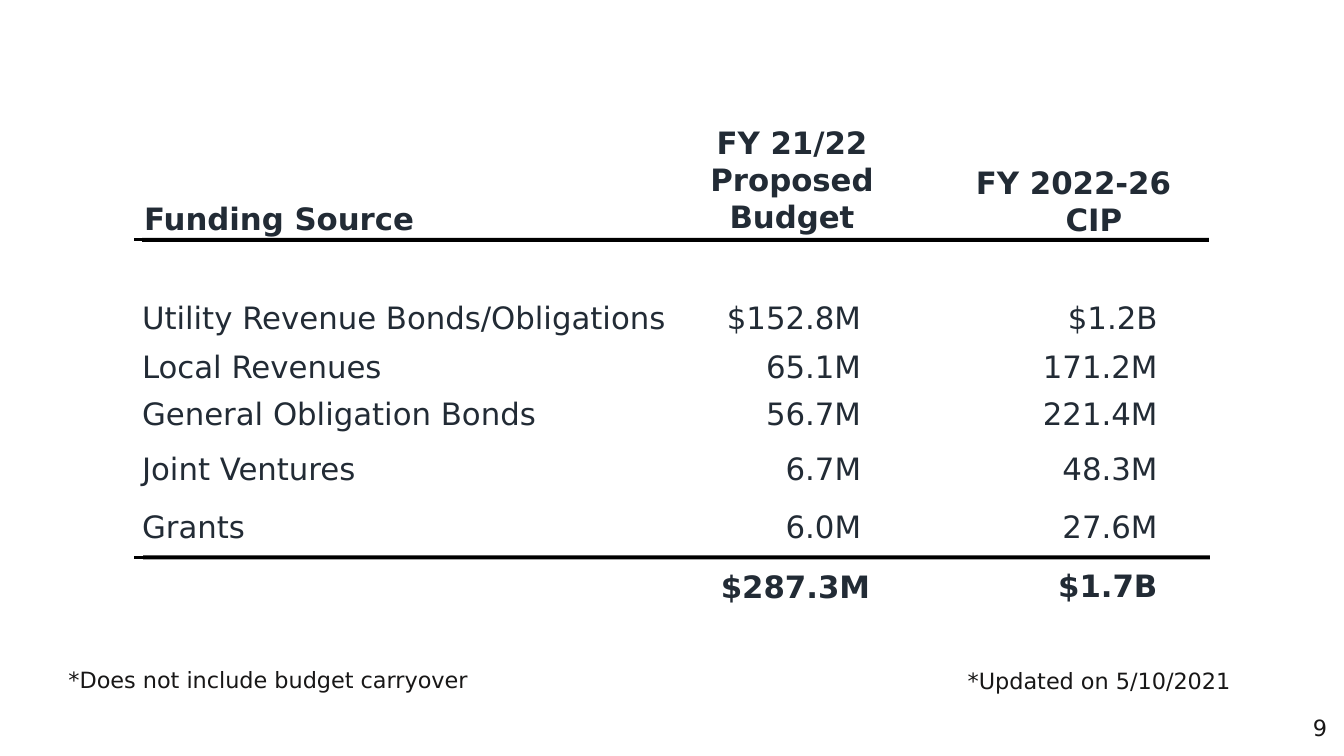
from pptx import Presentation
from pptx.dml.color import RGBColor
from pptx.enum.shapes import MSO_CONNECTOR as Conn, MSO_SHAPE as Shape
from pptx.enum.text import PP_ALIGN as Align
from pptx.util import Pt
from lxml.etree import SubElement
from pptx.oxml.ns import qn

PX = 9144  # EMU per px, 100 px to the inch
SLATE = RGBColor(0x22, 0x2B, 0x35)
INK = RGBColor(0x18, 0x17, 0x17)
BLACK = RGBColor(0, 0, 0)


class Page:
    font = "DejaVu Sans"

    def __init__(self, slide):
        self.shapes = slide.shapes

    def text(self, box, text, aligns=(Align.LEFT,), size=22, color=SLATE,
             bold=False, inset=(0, 0), space=None):
        """Add a text box; the last alignment goes on for later lines."""
        frame = self.shapes.add_textbox(*(n * PX for n in box)).text_frame
        frame.word_wrap = True
        frame.margin_left = frame.margin_right = inset[0] * PX
        frame.margin_top = frame.margin_bottom = inset[1] * PX
        frame.text = text
        for i, para in enumerate(frame.paragraphs):
            para.alignment = aligns[min(i, len(aligns) - 1)]
            if space:
                para.line_spacing = space
            for run in para.runs:
                run.font.name = self.font
                run.font.size = Pt(size)
                run.font.bold = bold
                run.font.color.rgb = color

    def note(self, box, text, align=Align.LEFT, space=0.9):
        self.text(box, text, (align,), 16, INK, inset=(10, 5), space=space)

    def amount(self, right, top, text, bold=False):
        self.text((right - 150, top, 150, 37), text, (Align.RIGHT,), bold=bold)

    def rule(self, left, top):
        """Add a hairline with a heavy bar over it."""
        y = (top + 2) * PX
        line = self.shapes.add_connector(
            Conn.STRAIGHT, 133 * PX, y, 1192 * PX, y)
        line.line.color.rgb = BLACK
        line.line.width = Pt(0)
        SubElement(line._element.spPr, qn("a:effectLst"))
        bar = self.shapes.add_shape(
            Shape.RECTANGLE, left * PX, top * PX, 1058 * PX, 4 * PX)
        bar.shadow.inherit = False
        bar.fill.solid()
        bar.fill.fore_color.rgb = BLACK
        bar.line.fill.background()


def main():
    deck = Presentation()
    deck.slide_width, deck.slide_height = 1333 * PX, 750 * PX
    page = Page(deck.slides.add_slide(deck.slide_layouts[6]))

    # Column heads
    page.text((143, 198, 332, 37), "Funding Source", bold=True)
    page.text((640, 123, 291, 111), "FY 21/22\nProposed\nBudget",
              (Align.CENTER,), bold=True)
    page.text((968, 162, 234, 74), "FY 2022-26\nCIP",
              (Align.LEFT, Align.CENTER), bold=True)

    # Funding rows
    rows = [
        (296, "Utility Revenue Bonds/Obligations", "$152.8M", "$1.2B"),
        (345, "Local Revenues", "65.1M", "171.2M"),
        (392, "General Obligation Bonds", "56.7M", "221.4M"),
        (446, "Joint Ventures", "6.7M", "48.3M"),
        (504, "Grants", "6.0M", "27.6M"),
    ]
    for top, source, budget, plan in rows:
        page.text((141, top, 527, 37), source)
        page.amount(854, top, budget)
        page.amount(1148, top, plan)

    # Totals
    page.amount(863, 563, "$287.3M", bold=True)
    page.amount(1148, 562, "$1.7B", bold=True)

    # Rules
    page.rule(141, 236)
    page.rule(142, 551)

    # Footnotes and page number
    page.note((58, 659, 452, 48), "*Does not include budget carryover")
    page.note((950, 660, 383, 48), "*Updated on 5/10/2021")
    page.note((1080, 704, 246, 25), "9", Align.RIGHT, space=None)

    deck.save("out.pptx")


if __name__ == "__main__":
    main()
